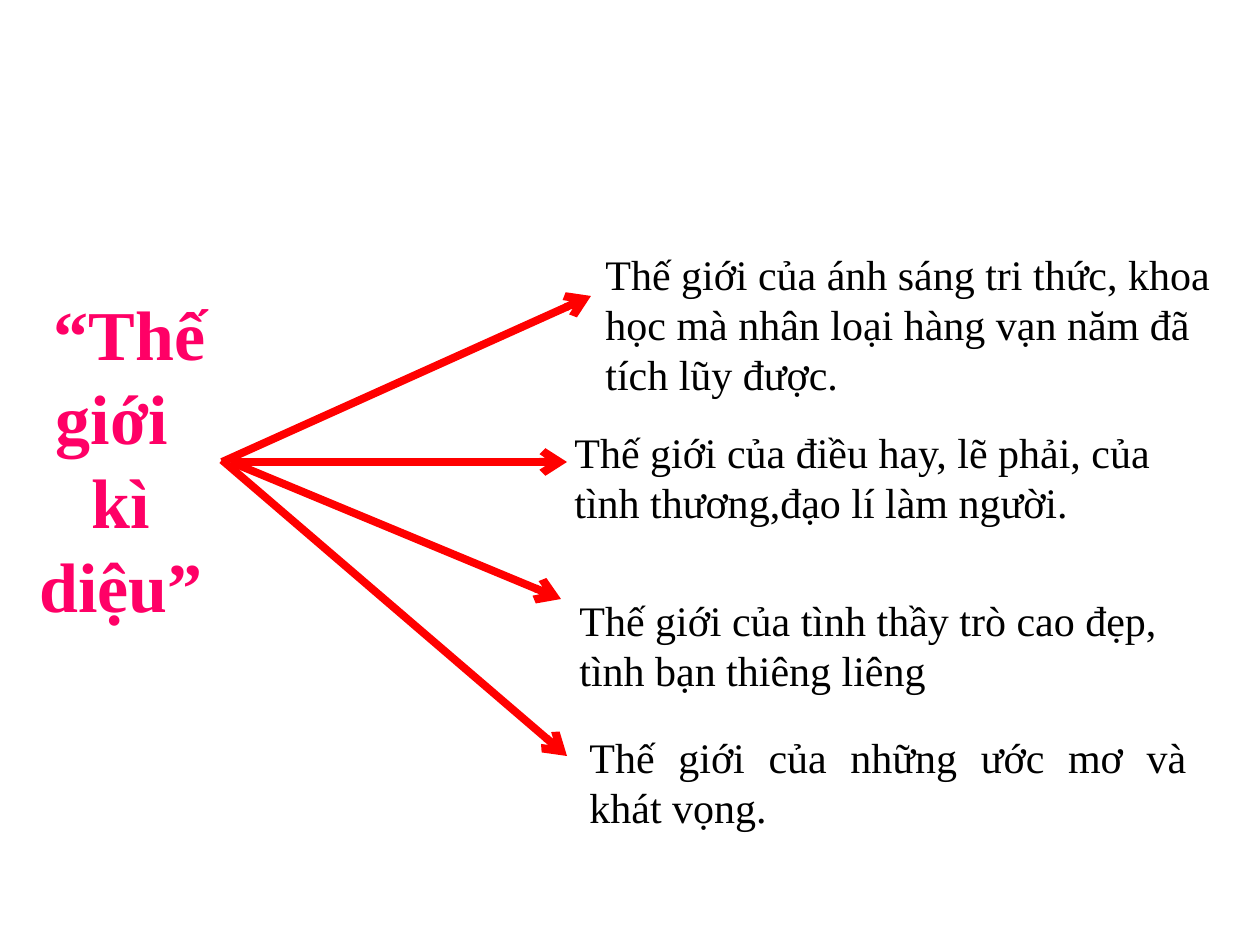
from lxml.etree import SubElement
from pptx import Presentation
from pptx.dml.color import RGBColor
from pptx.enum.shapes import MSO_CONNECTOR as Connector
from pptx.enum.text import MSO_AUTO_SIZE as AutoSize, PP_ALIGN as Align
from pptx.oxml.ns import qn
from pptx.util import Emu, Pt

EMU_PER_PX = 914400 / 126
COLORS = {"title": "FF0066", "body": "000000", "arrow": "FF0000"}


def px(length):
    return Emu(round(length * EMU_PER_PX))


class SlideBuilder:
    formats = {
        "title": {"size": Pt(40), "bold": True},
        "body": {"size": Pt(24), "bold": False},
    }
    font_name = "Times New Roman"
    arrow_width = Pt(4.5)

    def __init__(self, page):
        self.page = page

    def text(self, bounds, paragraphs, style="body", align=Align.LEFT):
        box = self.page.shapes.add_textbox(*map(px, bounds))
        frame = box.text_frame
        frame.word_wrap = True
        frame.auto_size = AutoSize.SHAPE_TO_FIT_TEXT
        for index, words in enumerate(paragraphs):
            para = frame.add_paragraph() if index else frame.paragraphs[0]
            para.alignment = align
            span = para.add_run()
            span.text = words
            span.font.name = self.font_name
            span.font.color.rgb = RGBColor.from_string(COLORS[style])
            for name, value in self.formats[style].items():
                setattr(span.font, name, value)

    def arrow(self, start, end):
        line = self.page.shapes.add_connector(
            Connector.STRAIGHT, *map(px, start + end))
        line.line.color.rgb = RGBColor.from_string(COLORS["arrow"])
        line.line.width = self.arrow_width
        properties = line.element.spPr
        SubElement(properties.find(qn("a:ln")), qn("a:tailEnd"), type="arrow")
        SubElement(properties, qn("a:effectLst"))


def main():
    deck = Presentation()
    deck.slide_width, deck.slide_height = px(1260), px(945)
    builder = SlideBuilder(deck.slides.add_slide(deck.slide_layouts[6]))

    # Central idea on the left
    builder.text((21, 284, 200, 352), [" “Thế giới ", "kì diệu”"],
                 "title", Align.CENTER)

    # Meanings on the right, each with its arrow
    meanings = [
        ("Thế giới của ánh sáng tri thức, khoa học mà nhân loại hàng vạn năm đã tích lũy được.",
         (593, 242, 636, 165), Align.LEFT, (222, 462), (591, 296)),
        ("Thế giới của điều hay, lẽ phải, của tình thương,đạo lí làm người.",
         (562, 420, 663, 165), Align.LEFT, (231, 462), (567, 462)),
        ("Thế giới của tình thầy trò cao đẹp, tình bạn thiêng liêng",
         (567, 588, 651, 115), Align.LEFT, (231, 462), (561, 599)),
        ("Thế giới của những ước mơ và khát vọng.",
         (577, 725, 622, 165), Align.JUSTIFY, (222, 460), (567, 756)),
    ]
    for words, bounds, align, start, end in meanings:
        builder.text(bounds, [words], align=align)
        builder.arrow(start, end)

    deck.save("out.pptx")


if __name__ == "__main__":
    main()
